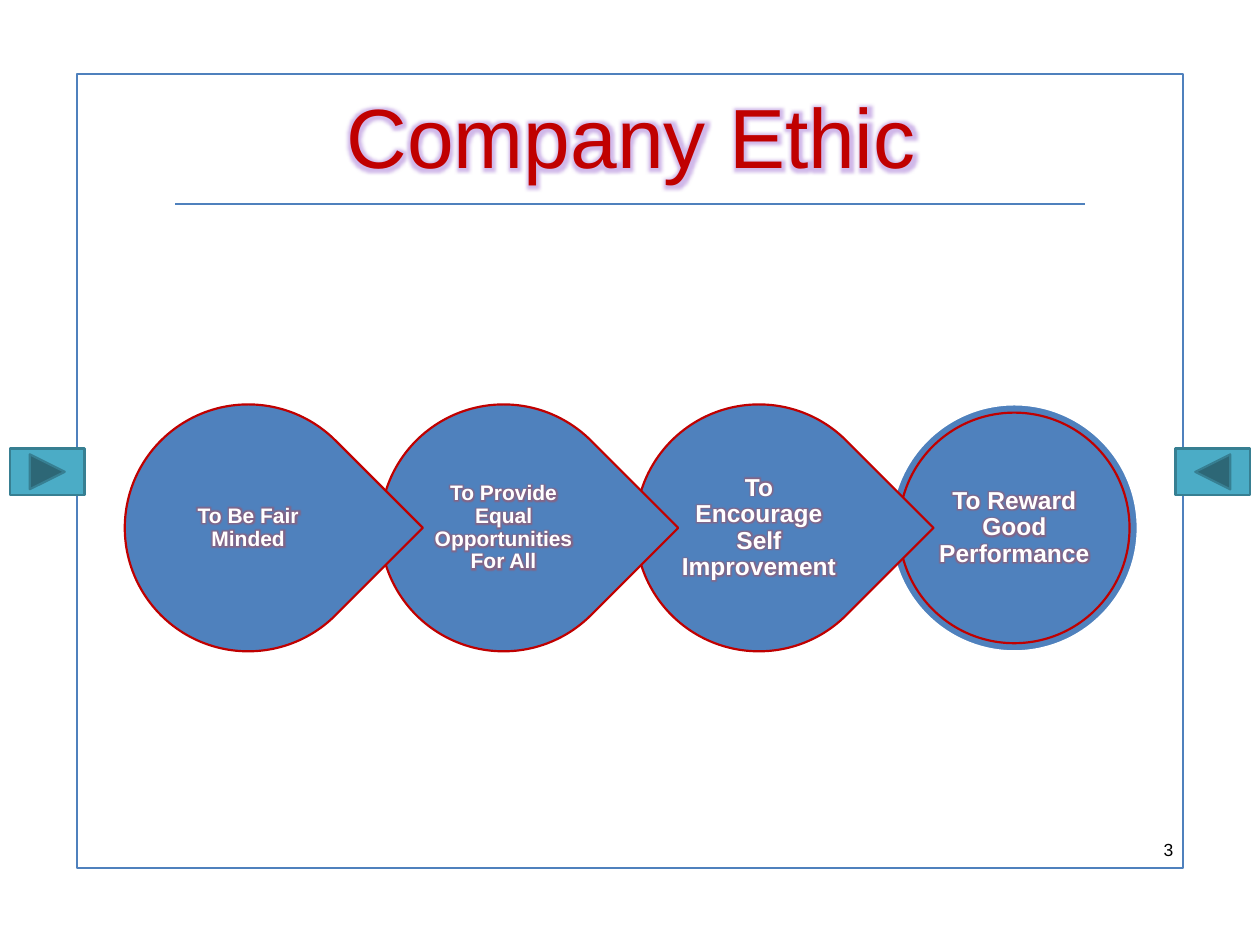
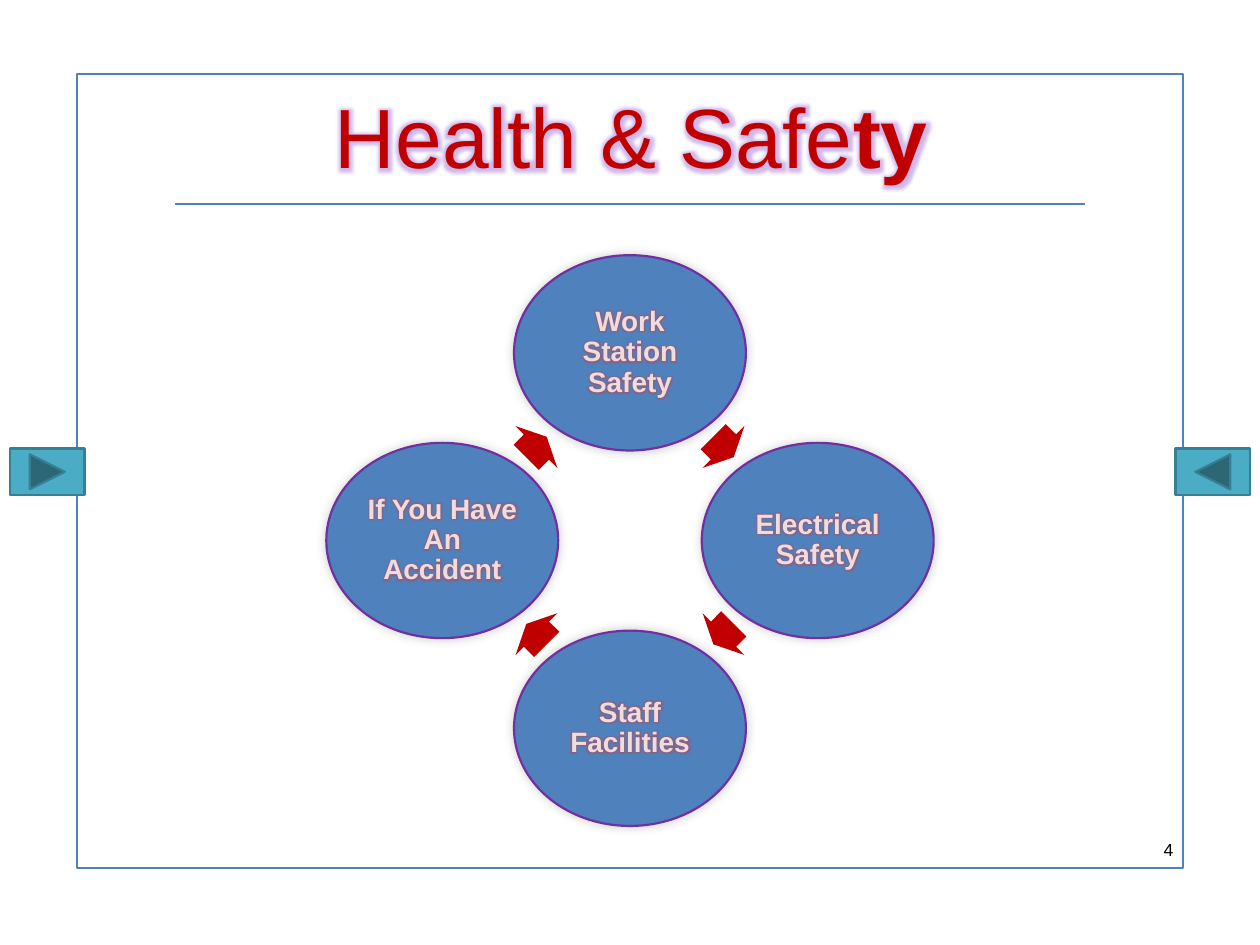
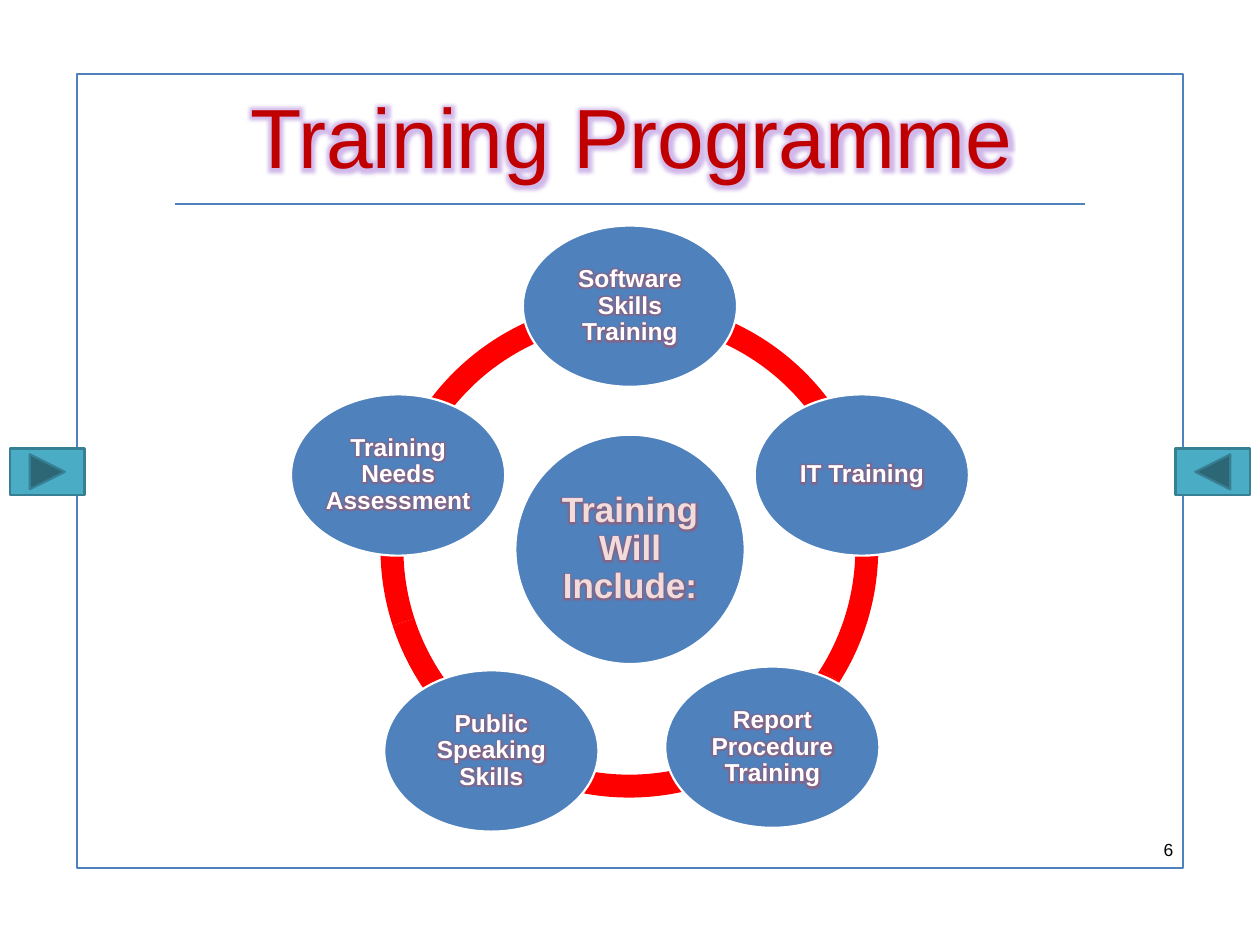
"""Build three induction slides: company ethic, health and safety, training."""
from dataclasses import dataclass
from math import cos, radians, sin, sqrt

from lxml.etree import SubElement
from pptx import Presentation
from pptx.dml.color import RGBColor
from pptx.enum.shapes import MSO_CONNECTOR, MSO_SHAPE as SHAPE
from pptx.enum.text import MSO_ANCHOR as ANCHOR, PP_ALIGN as ALIGN
from pptx.oxml.ns import qn
from pptx.util import Inches, Pt

COLORS = {
    "blue": "4F81BD", "teal": "4BACC6", "teal_edge": "377F92",
    "dark_red": "C00000", "red": "FF0000", "purple": "7030A0",
    "white": "FFFFFF", "blush": "F2DCDB", "black": "000000",
    "title_glow": "8B4FC9", "label_glow": "D03B37",
}
FONT = "Arial"
LINE_PT = 1.25


@dataclass(frozen=True)
class Box:
    left: float
    top: float
    width: float
    height: float

    def emu(self) -> tuple:
        return tuple(Inches(v) for v in (self.left, self.top, self.width, self.height))

    def inscribed(self) -> "Box":
        return Box.around(self.left + self.width / 2, self.top + self.height / 2,
                          self.width / sqrt(2), self.height / sqrt(2))

    @staticmethod
    def around(cx: float, cy: float, width: float, height: float) -> "Box":
        return Box(cx - width / 2, cy - height / 2, width, height)


@dataclass(frozen=True)
class Style:
    size: float
    color: str
    bold: bool = False
    align: ALIGN = ALIGN.CENTER
    inset: float = 0.1
    spacing: float = 1.0
    after: float = 0
    glow: str = ""
    glow_pt: float = 0


@dataclass(frozen=True)
class Run:
    text: str
    bold: bool = False


@dataclass(frozen=True)
class Label:
    text: str
    size: float = 14


@dataclass(frozen=True)
class Topic:
    text: str
    left: float
    top: float


TITLE = Style(48, "dark_red", glow="title_glow", glow_pt=8)
NUMBER = Style(10, "black", align=ALIGN.RIGHT)


def label_style(size: float, color: str = "white", inset: float = 0.02) -> Style:
    return Style(size, color, True, inset=inset, spacing=0.9, after=6,
                 glow="label_glow", glow_pt=5)


def rgb(name: str) -> RGBColor:
    return RGBColor.from_string(COLORS[name])


def add_color(parent, name: str, alpha: int) -> None:
    clr = SubElement(parent, qn("a:srgbClr"), val=COLORS[name])
    SubElement(clr, qn("a:alpha"), val=str(alpha * 1000))


def add_shape(s, kind: SHAPE, box: Box, fill: str = "", line: str = "",
              rotation: float = 0, alpha: int = 100):
    sp = s.shapes.add_shape(kind, *box.emu())
    sp.shadow.inherit = False
    sp.rotation = rotation
    if fill:
        sp.fill.solid()
        sp.fill.fore_color.rgb = rgb(fill)
        if alpha < 100:
            clr = sp.fill._xPr.find(".//" + qn("a:srgbClr"))
            SubElement(clr, qn("a:alpha"), val=str(alpha * 1000))
    else:
        sp.fill.background()
    if line:
        sp.line.color.rgb = rgb(line)
        sp.line.width = Pt(LINE_PT)
    else:
        sp.line.fill.background()
    return sp


def add_soft_shadow(sp) -> None:
    effects = sp._element.spPr.find(qn("a:effectLst"))
    shadow = SubElement(effects, qn("a:outerShdw"), blurRad=str(Pt(6)), dist="0",
                        dir="18900000", algn="ctr", rotWithShape="0")
    add_color(shadow, "black", 20)


def add_text(s, box: Box, runs: list[Run], style: Style) -> None:
    tf = s.shapes.add_textbox(*box.emu()).text_frame
    tf.word_wrap = True
    tf.vertical_anchor = ANCHOR.MIDDLE
    tf.margin_left = tf.margin_right = Inches(style.inset)
    tf.margin_top = tf.margin_bottom = Inches(min(style.inset, 0.05))
    p = tf.paragraphs[0]
    p.alignment = style.align
    p.line_spacing = style.spacing
    p.space_after = Pt(style.after)
    p.font.name = FONT
    p.font.size = Pt(style.size)
    p.font.bold = style.bold
    p.font.color.rgb = rgb(style.color)
    for run in runs:
        r = p.add_run()
        r.text = run.text
        if run.bold:
            r.font.bold = True
        if style.glow:
            effects = SubElement(r._r.get_or_add_rPr(), qn("a:effectLst"))
            glow = SubElement(effects, qn("a:glow"), rad=str(Pt(style.glow_pt)))
            add_color(glow, style.glow, 40)


def add_oval(s, box: Box, text: str, style: Style, line: str = "white"):
    sp = add_shape(s, SHAPE.OVAL, box, "blue", line)
    add_text(s, box.inscribed(), [Run(text)], style)
    return sp


def add_page(prs, title: list[Run], number: int):
    s = prs.slides.add_slide(prs.slide_layouts[6])
    add_shape(s, SHAPE.RECTANGLE, Box(0.61, 0.59, 8.78, 6.3), line="blue")
    for left, rotation in ((9.33, 180), (0.08, 0)):
        add_shape(s, SHAPE.ACTION_BUTTON_FORWARD_OR_NEXT, Box(left, 3.56, 0.59, 0.37),
                  "teal", "teal_edge", rotation)
    add_text(s, Box(1.29, 0.36, 7.44, 1.43), title, TITLE)
    add_text(s, Box(8.98, 6.59, 0.43, 0.31), [Run(str(number))], NUMBER)
    rule = s.shapes.add_connector(MSO_CONNECTOR.STRAIGHT, Inches(1.39), Inches(1.62),
                                  Inches(8.61), Inches(1.62))
    rule.line.color.rgb = rgb("blue")
    rule.line.width = Pt(LINE_PT)
    SubElement(rule._element.spPr, qn("a:effectLst"))
    return s


def build_ethic(prs) -> None:
    s = add_page(prs, [Run("Company Ethic")], 3)
    labels = [
        Label("To Be Fair Minded", 12),
        Label("To Provide Equal Opportunities For All", 12),
        Label("To Encourage Self Improvement"),
        Label("To Reward Good Performance"),
    ]
    last = len(labels) - 1
    first_cx, last_cx, cy = 1.97, 8.05, 4.19
    for i in range(last, -1, -1):
        cx = first_cx + (last_cx - first_cx) * i / last
        outer = Box.around(cx, cy, 1.96, 1.96)
        inner = Box.around(cx, cy, 1.83, 1.83)
        if i == last:
            add_shape(s, SHAPE.OVAL, outer, "blue", "white")
            add_shape(s, SHAPE.OVAL, inner, "blue", "dark_red")
        else:
            drop = add_shape(s, SHAPE.TEAR, outer, "blue", "dark_red", 45)
            drop.adjustments[0] = 1
            add_shape(s, SHAPE.OVAL, inner, "blue", "blue", alpha=90)
        add_text(s, inner.inscribed(), [Run(labels[i].text)], label_style(labels[i].size))


def build_safety(prs) -> None:
    s = add_page(prs, [Run("Health & Safe"), Run("ty", True)], 4)
    steps = ["Work Station Safety", "Electrical Safety", "Staff Facilities",
             "If You Have An Accident"]
    cx, cy, oval_radius, arrow_radius = 5, 4.29, 1.49, 1.05
    turn = 360 / len(steps)
    for i, step in enumerate(steps):
        angle = radians(i * turn)
        box = Box.around(cx + oval_radius * sin(angle), cy - oval_radius * cos(angle),
                         1.84, 1.55)
        add_soft_shadow(add_oval(s, box, step, label_style(16, "blush"), "purple"))
        heading = (i + 0.5) * turn
        angle = radians(heading)
        box = Box.around(cx + arrow_radius * sin(angle), cy - arrow_radius * cos(angle),
                         0.23, 0.47)
        arrow = add_shape(s, SHAPE.RIGHT_ARROW, box, "dark_red", rotation=heading)
        arrow.adjustments[0] = 0.6
        arrow.adjustments[1] = 0.5


def build_training(prs) -> None:
    s = add_page(prs, [Run("Training Programme")], 6)
    angles = [118.8, 162, 205.2, 32.4, 74.66]
    degree = 60000 / 100000
    for start, end in zip(angles, angles[1:] + angles[:1]):
        arc = add_shape(s, SHAPE.BLOCK_ARC, Box(3.02, 2.38, 3.95, 3.95), "red")
        for i, value in enumerate((start * degree, end * degree, 0.046)):
            arc.adjustments[i] = value
    add_oval(s, Box(4.09, 3.45, 1.82, 1.82), "Training Will Include:",
             label_style(20, "blush", 0.03))
    topics = [
        Topic("Software Skills Training", 4.15, 1.79),
        Topic("IT Training", 5.99, 3.13),
        Topic("Report Procedure Training", 5.28, 5.29),
        Topic("Public Speaking Skills", 3.05, 5.32),
        Topic("Training Needs Assessment", 2.31, 3.13),
    ]
    for topic in topics:
        add_oval(s, Box(topic.left, topic.top, 1.7, 1.28), topic.text, label_style(14))


def main() -> None:
    prs = Presentation()
    prs.slide_width, prs.slide_height = Inches(10), Inches(7.5)
    build_ethic(prs)
    build_safety(prs)
    build_training(prs)
    prs.save("out.pptx")


if __name__ == "__main__":
    main()
